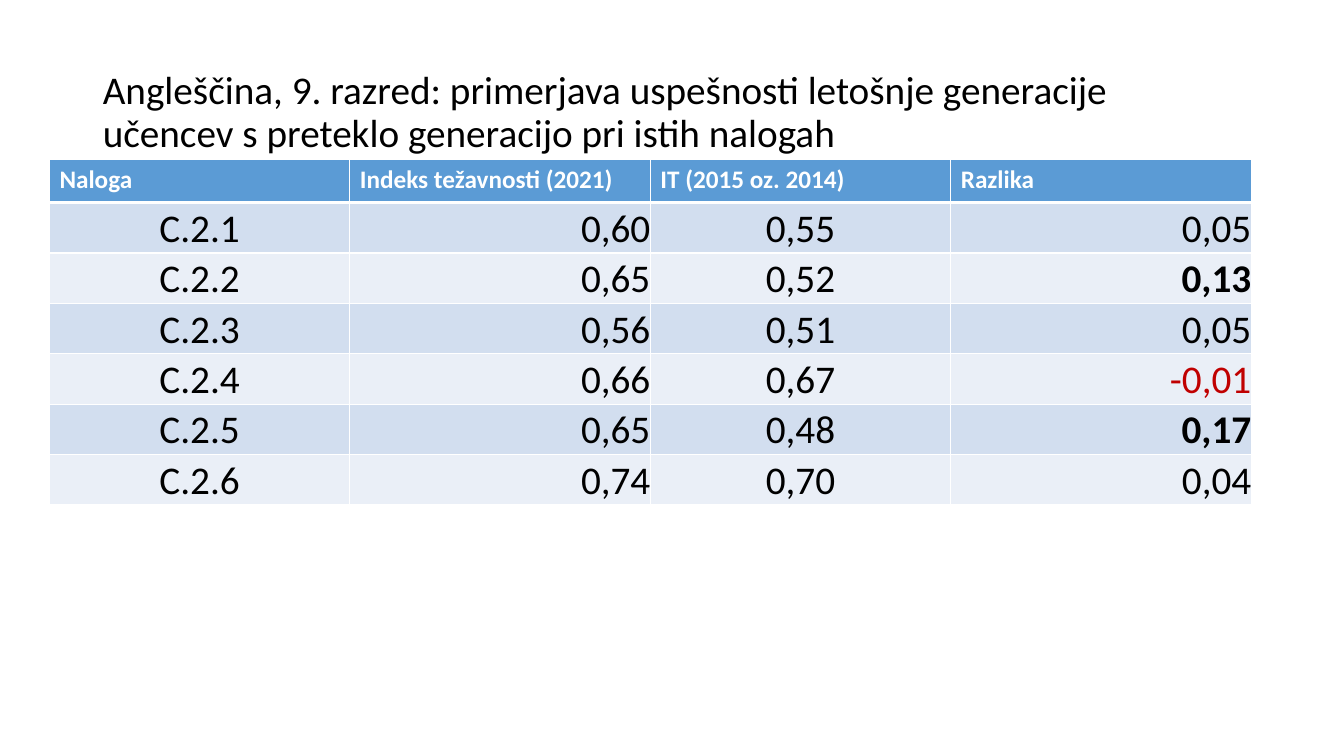
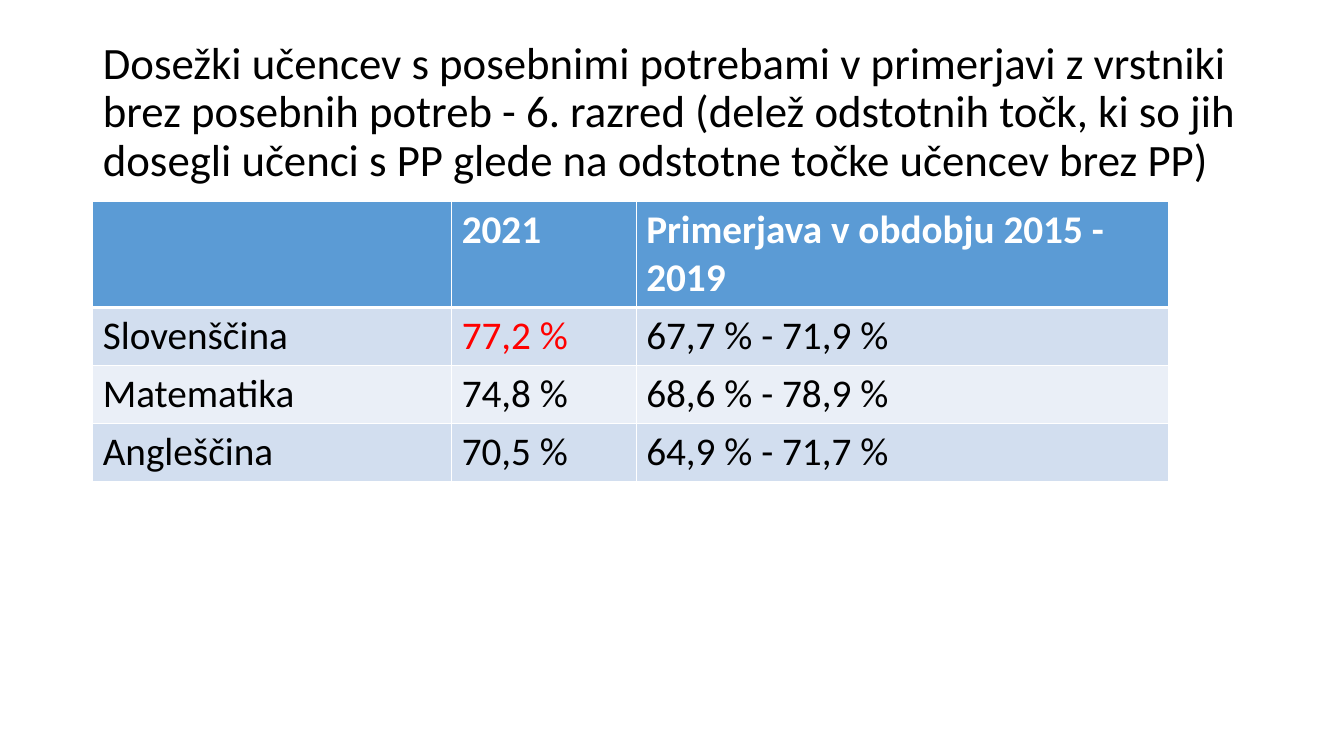
from lxml import etree
from pptx import Presentation
from pptx.dml.color import RGBColor
from pptx.enum import text
from pptx.oxml import ns
from pptx.util import Inches, Pt

FONT = "Calibri"
BLACK, WHITE = "000000", "FFFFFF"
HEADER_FILL, BAND_FILLS = "5B9BD5", ("D2DEEF", "EAEFF7")
TITLE_BOX = (0.92, 0.4, 11.5, 1.45)
TITLE_ONLY = 5
LEFT, CENTER, RIGHT = (text.PP_ALIGN.LEFT, text.PP_ALIGN.CENTER,
                       text.PP_ALIGN.RIGHT)


def color(value):
    return RGBColor.from_string(value)


def write_text(frame, words, size=28, ink=BLACK, bold=False, align=LEFT,
               spacing=None):
    para = frame.paragraphs[0]
    para.alignment = align
    para.line_spacing = spacing
    if not words:
        para.font.size = Pt(size)
        return
    span = para.add_run()
    span.text = words
    span.font.name = FONT
    span.font.size = Pt(size)
    span.font.bold = bold
    span.font.color.rgb = color(ink)


def draw_borders(cell, top, bottom):
    properties = cell._tc.get_or_add_tcPr()
    widths = {"L": 1, "R": 1, "T": top, "B": bottom}
    for index, (side, width) in enumerate(widths.items()):
        line = etree.Element(ns.qn(f"a:ln{side}"), w=str(Pt(width)))
        fill = etree.SubElement(line, ns.qn("a:solidFill"))
        etree.SubElement(fill, ns.qn("a:srgbClr"), val=WHITE)
        properties.insert(index, line)


def add_title(page, words, box, size):
    title = page.shapes.title
    title.left, title.top, title.width, title.height = map(Inches, box)
    frame = title.text_frame
    frame.word_wrap = True
    frame.auto_size = text.MSO_AUTO_SIZE.NONE
    frame.vertical_anchor = text.MSO_ANCHOR.MIDDLE
    write_text(frame, words, size=size, spacing=0.9)


def add_data_table(page, rows, left, top, widths, header_height, row_height,
                   header_size, aligns, accents, tight=False):
    height = header_height + row_height * (len(rows) - 1)
    box = map(Inches, (left, top, sum(widths), height))
    table = page.shapes.add_table(len(rows), len(widths), *box).table
    for column, width in zip(table.columns, widths):
        column.width = Inches(width)
    for r, values in enumerate(rows):
        header = r == 0
        table.rows[r].height = Inches(header_height if header else row_height)
        for c, value in enumerate(values):
            cell = table.cell(r, c)
            cell.fill.solid()
            cell.fill.fore_color.rgb = color(
                HEADER_FILL if header else BAND_FILLS[(r - 1) % 2])
            draw_borders(cell, top=3 if r == 1 else 1, bottom=3 if header else 1)
            if header:
                style = {"size": header_size, "ink": WHITE, "bold": True}
            else:
                style = {"align": aligns[c], **accents.get((r, c), {})}
                if tight:
                    cell.margin_left = cell.margin_right = 0
                    cell.margin_top = cell.margin_bottom = 0
                    cell.vertical_anchor = text.MSO_ANCHOR.BOTTOM
            write_text(cell.text_frame, value, **style)


def add_table_page(deck, title, title_size, **table_options):
    page = deck.slides.add_slide(deck.slide_layouts[TITLE_ONLY])
    add_title(page, title, TITLE_BOX, title_size)
    add_data_table(page, **table_options)


def main():
    deck = Presentation()
    deck.slide_width, deck.slide_height = Inches(13.33), Inches(7.5)

    add_table_page(
        deck,
        "Angleščina, 9. razred: primerjava uspešnosti letošnje generacije "
        "učencev s preteklo generacijo pri istih nalogah",
        28,
        rows=[
            ("Naloga", "Indeks težavnosti (2021)", "IT (2015 oz. 2014)", "Razlika"),
            ("C.2.1", "0,60", "0,55", "0,05"),
            ("C.2.2", "0,65", "0,52", "0,13"),
            ("C.2.3", "0,56", "0,51", "0,05"),
            ("C.2.4", "0,66", "0,67", "-0,01"),
            ("C.2.5", "0,65", "0,48", "0,17"),
            ("C.2.6", "0,74", "0,70", "0,04"),
        ],
        left=0.49, top=1.58, widths=[2.98] * 4,
        header_height=0.43, row_height=0.5, header_size=18,
        aligns=(CENTER, RIGHT, CENTER, RIGHT),
        accents={(2, 3): {"bold": True}, (4, 3): {"ink": "C00000"},
                 (5, 3): {"bold": True}},
        tight=True,
    )
    add_table_page(
        deck,
        "Dosežki učencev s posebnimi potrebami v primerjavi z vrstniki brez "
        "posebnih potreb - 6. razred (delež odstotnih točk, ki so jih dosegli "
        "učenci s PP glede na odstotne točke učencev brez PP)",
        32,
        rows=[
            ("", "2021", "Primerjava v obdobju 2015 - 2019"),
            ("Slovenščina", "77,2 %", "67,7 % - 71,9 %"),
            ("Matematika", "74,8 %", "68,6 % - 78,9 %"),
            ("Angleščina", "70,5 %", "64,9 % - 71,7 %"),
        ],
        left=0.92, top=2, widths=[3.56, 1.83, 5.28],
        header_height=1.03, row_height=0.57, header_size=28,
        aligns=(LEFT, LEFT, LEFT),
        accents={(1, 1): {"ink": "FF0000"}},
    )
    deck.save("out.pptx")


if __name__ == "__main__":
    main()
